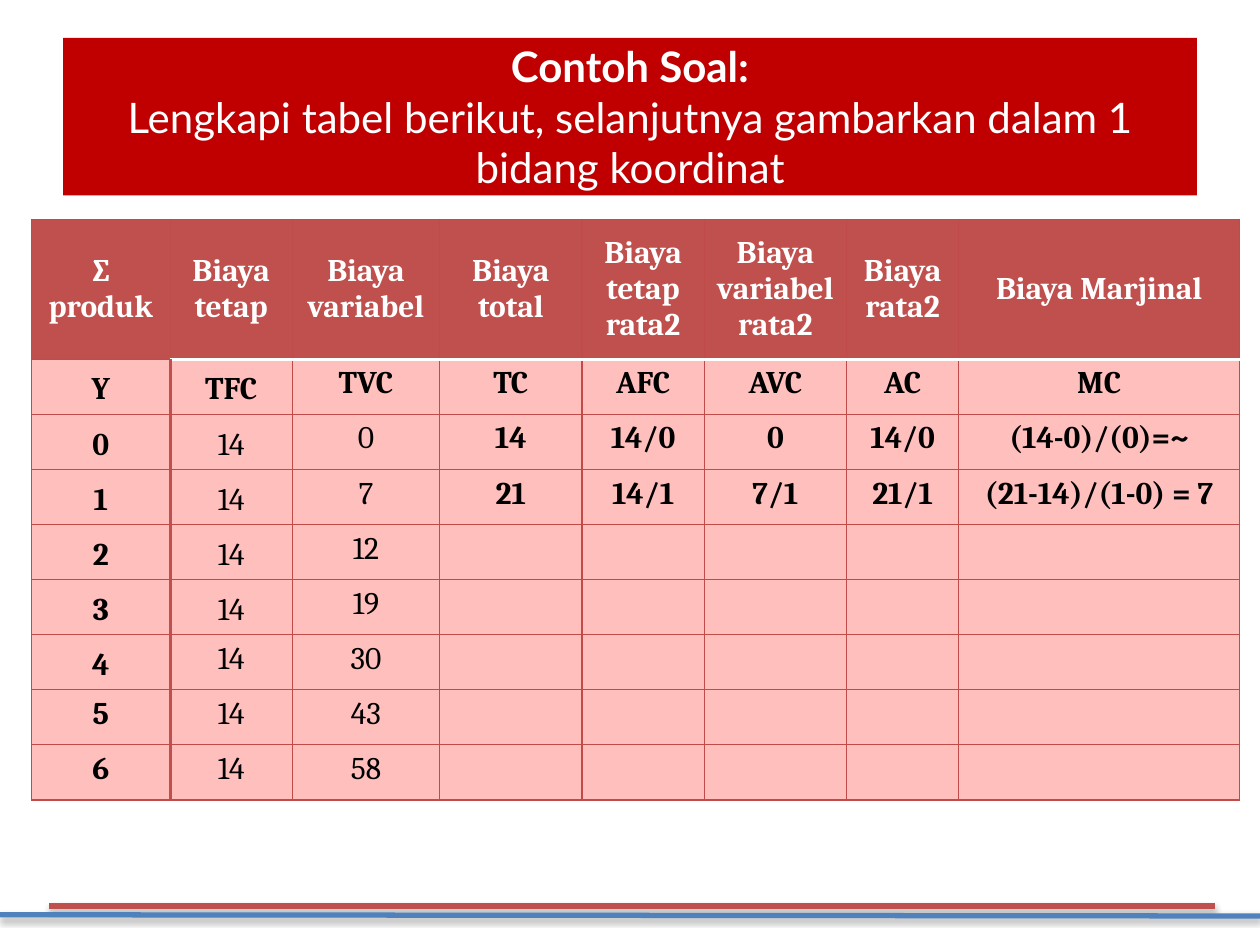
import pptx
import pptx.util
import pptx.dml.color
import pptx.enum.shapes
import pptx.enum.text
import pptx.oxml
import pptx.oxml.ns
from lxml import etree

Inches = pptx.util.Inches
Pt = pptx.util.Pt
ANCHOR = pptx.enum.text.MSO_ANCHOR

COLORS = {
    "banner": "C00000",
    "header": "C0504D",
    "body": "FFC0BD",
    "grid": "BF4C48",
    "blue": "4F81BD",
    "white": "FFFFFF",
    "black": "000000",
}
COLUMN_WIDTHS = [1.1, 0.97, 1.17, 1.13, 0.97, 1.13, 0.89, 2.23]
HEADER_HEIGHT, ROW_HEIGHT = 1.11, 0.4375
HEADERS = ["∑ produk", "Biaya tetap", "Biaya variabel", "Biaya total",
           "Biaya tetap rata2", "Biaya variabel rata2", "Biaya rata2", "Biaya Marjinal"]
SYMBOLS = ["Y", "TFC", "TVC", "TC", "AFC", "AVC", "AC", "MC"]
FIXED_COST = 14
VARIABLE_COSTS = [0, 7, 12, 19, 30, 43, 58]
WORKED_ANSWERS = [
    ["14", "14/0", "0", "14/0", "(14-0)/(0)=~"],
    ["21", "14/1", "7/1", "21/1", "(21-14)/(1-0) = 7"],
]


def color(name):
    return pptx.dml.color.RGBColor.from_string(COLORS[name])


def format_run(run, font_name, size, color_name, bold):
    run.font.name = font_name
    run.font.size = Pt(size)
    run.font.color.rgb = color(color_name)
    run.font.bold = bold


def add_title(slide, left, top, width, height):
    title = slide.shapes.title
    title.left, title.top, title.width, title.height = map(Inches, (left, top, width, height))
    title.fill.solid()
    title.fill.fore_color.rgb = color("banner")
    frame = title.text_frame
    frame.word_wrap = True
    frame.auto_size = pptx.enum.text.MSO_AUTO_SIZE.NONE
    frame.vertical_anchor = ANCHOR.MIDDLE
    paragraph = frame.paragraphs[0]
    paragraph.text = ("Contoh Soal:\v"
                      "Lengkapi tabel berikut, selanjutnya gambarkan dalam 1 bidang koordinat")
    paragraph.alignment = pptx.enum.text.PP_ALIGN.CENTER
    for index, run in enumerate(paragraph.runs):
        format_run(run, "Lato", 24, "white", index == 0)


def set_borders(cell, row, column):
    thin = ("grid", 0.75)
    thick, white = ("header", 2), ("white", 2)
    borders = {
        "lnL": thick if row > 0 and column == 1 else thin,
        "lnR": thick if row > 0 and column == 0 else thin,
        "lnT": white if row == 1 and column > 0 else thin,
        "lnB": white if row == 0 and column > 0 else thin,
    }
    properties = cell._tc.get_or_add_tcPr()
    for tag, (color_name, width) in borders.items():
        properties.append(pptx.oxml.parse_xml(
            f'<a:{tag} {pptx.oxml.ns.nsdecls("a")} w="{Pt(width)}"><a:solidFill>'
            f'<a:srgbClr val="{COLORS[color_name]}"/></a:solidFill></a:{tag}>'))


def cell_anchor(row, column):
    if row == 0:
        return ANCHOR.MIDDLE
    # The first two columns sit low in the upper rows
    last_low_row = {0: 6, 1: 5}.get(column, 0)
    return ANCHOR.BOTTOM if row <= last_low_row else ANCHOR.TOP


def table_rows():
    rows = [HEADERS, SYMBOLS]
    for quantity, variable_cost in enumerate(VARIABLE_COSTS):
        answers = WORKED_ANSWERS[quantity] if quantity < len(WORKED_ANSWERS) else [""] * 5
        rows.append([str(quantity), str(FIXED_COST), str(variable_cost), *answers])
    return rows


def add_cost_table(slide, left, top, width, height):
    rows = table_rows()
    table = slide.shapes.add_table(len(rows), len(COLUMN_WIDTHS), Inches(left), Inches(top),
                                   Inches(width), Inches(height)).table
    table.first_row = table.horz_banding = False
    for column, column_width in zip(table.columns, COLUMN_WIDTHS):
        column.width = Inches(column_width)
    for row_index, values in enumerate(rows):
        is_header = row_index == 0
        table.rows[row_index].height = Inches(HEADER_HEIGHT if is_header else ROW_HEIGHT)
        for column_index, value in enumerate(values):
            cell = table.cell(row_index, column_index)
            set_borders(cell, row_index, column_index)
            cell.fill.solid()
            cell.fill.fore_color.rgb = color("header" if is_header else "body")
            cell.vertical_anchor = cell_anchor(row_index, column_index)
            paragraph = cell.text_frame.paragraphs[0]
            paragraph.text = value
            paragraph.alignment = pptx.enum.text.PP_ALIGN.CENTER
            # Given costs are regular, everything else is bold
            bold = row_index < 2 or column_index not in (1, 2)
            for run in paragraph.runs:
                format_run(run, "Cambria", 18, "white" if is_header else "black", bold)


def add_footer_line(slide, left, top, width, drop, color_name):
    line = slide.shapes.add_connector(
        pptx.enum.shapes.MSO_CONNECTOR.STRAIGHT,
        Inches(left), Inches(top), Inches(left + width), Inches(top + drop))
    line.line.color.rgb = color(color_name)
    line.line.width = Pt(3)
    effects = etree.SubElement(line._element.spPr, pptx.oxml.ns.qn("a:effectLst"))
    effects.append(pptx.oxml.parse_xml(
        f'<a:outerShdw {pptx.oxml.ns.nsdecls("a")} blurRad="{Pt(3.1)}" dist="{Pt(1.8)}" '
        f'dir="5400000" rotWithShape="0"><a:srgbClr val="{COLORS["black"]}">'
        '<a:alpha val="35000"/></a:srgbClr></a:outerShdw>'))


def main():
    presentation = pptx.Presentation()
    presentation.slide_width, presentation.slide_height = Inches(10), Inches(7.5)
    slide = presentation.slides.add_slide(presentation.slide_layouts[5])
    # Title banner
    add_title(slide, 0.5, 0.3, 9, 1.25)
    # Cost table
    add_cost_table(slide, 0.25, 1.74, 9.6, 4.61)
    # Footer lines
    add_footer_line(slide, 0.39, 7.19, 9.25, 0, "header")
    add_footer_line(slide, 0, 7.26, 10, 0.01, "blue")
    presentation.save("out.pptx")


if __name__ == "__main__":
    main()
